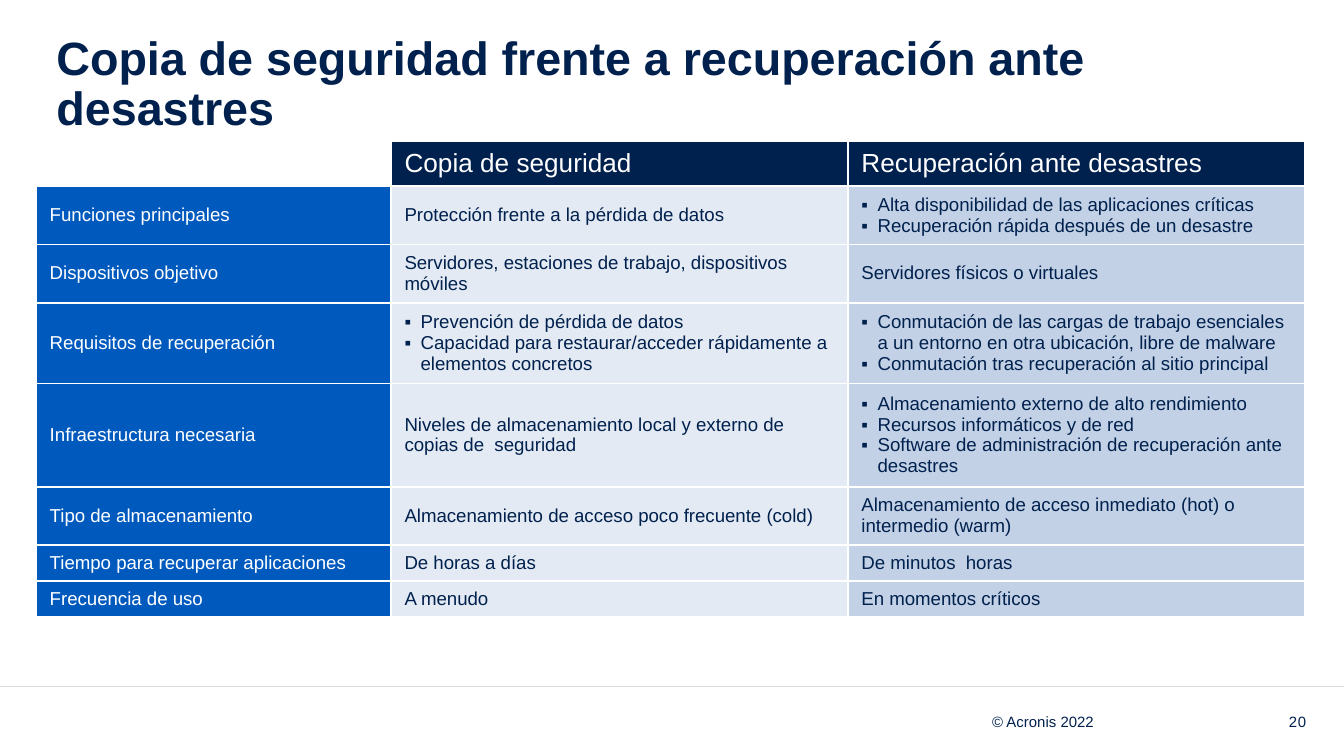
from pptx import Presentation
from pptx.dml.color import RGBColor
from pptx.enum.shapes import MSO_CONNECTOR
from pptx.enum.text import MSO_ANCHOR, MSO_AUTO_SIZE, PP_ALIGN
from pptx.oxml.ns import qn
from pptx.util import Inches, Pt
from lxml.etree import SubElement

COLORS = {
    "navy": "00204D",
    "blue": "005ABE",
    "pale": "E3EAF3",
    "mist": "C2D1E5",
    "white": "FFFFFF",
    "rule": "D9D9D9",
}


def add_run(paragraph, text, size, color, bold=False):
    run = paragraph.add_run()
    run.text = text
    run.font.name = "Arial"
    run.font.size = Pt(size)
    run.font.bold = bold
    run.font.color.rgb = RGBColor.from_string(COLORS[color])
    return run


def set_borders(cell):
    properties = cell._tc.get_or_add_tcPr()
    for position, tag in enumerate(["a:lnL", "a:lnR", "a:lnT", "a:lnB"]):
        border = SubElement(properties, qn(tag), w=str(Pt(1)))
        fill = SubElement(border, qn("a:solidFill"))
        SubElement(fill, qn("a:srgbClr"), val=COLORS["white"])
        properties.insert(position, border)


prs = Presentation()
prs.slide_width = Inches(10)
prs.slide_height = Inches(10 * 9 / 16)
slide = prs.slides.add_slide(prs.slide_layouts[5])

footer_rule = slide.shapes.add_connector(
    MSO_CONNECTOR.STRAIGHT, Inches(0), Inches(5.11), Inches(10), Inches(5.11)
)
footer_rule.line.color.rgb = RGBColor.from_string(COLORS["rule"])
footer_rule.line.width = Pt(0.5)
SubElement(footer_rule._element.spPr, qn("a:effectLst"))

footers = [("© Acronis 2022", 6.52, 1.62, 0), ("20", 9.15, 0.57, 50)]
for text, left, width, spacing in footers:
    footer = slide.shapes.add_textbox(Inches(left), Inches(5.11), Inches(width), Inches(0.52))
    frame = footer.text_frame
    frame.word_wrap = True
    frame.vertical_anchor = MSO_ANCHOR.MIDDLE
    frame.margin_left = frame.margin_right = frame.margin_top = frame.margin_bottom = 0
    frame.paragraphs[0].alignment = PP_ALIGN.RIGHT
    run = add_run(frame.paragraphs[0], text, 8, "navy")
    if spacing:
        run._r.get_or_add_rPr().set("spc", str(spacing))

title = slide.shapes.title
title.left, title.top = Inches(0.42), Inches(0.26)
title.width, title.height = Inches(9.15), Inches(0.78)
heading = title.text_frame
heading.word_wrap = True
heading.auto_size = MSO_AUTO_SIZE.NONE
heading.vertical_anchor = MSO_ANCHOR.TOP
heading.margin_left = heading.margin_right = heading.margin_top = heading.margin_bottom = 0
heading.paragraphs[0].alignment = PP_ALIGN.LEFT
heading.paragraphs[0].line_spacing = 0.9
add_run(heading.paragraphs[0], "Copia de seguridad frente a recuperación ante desastres", 25, "navy", True)

comparison = [
    ("", "Copia de seguridad", "Recuperación ante desastres"),
    ("Funciones principales", "Protección frente a la pérdida de datos",
     ["Alta disponibilidad de las aplicaciones críticas",
      "Recuperación rápida después de un desastre"]),
    ("Dispositivos objetivo", "Servidores, estaciones de trabajo, dispositivos móviles",
     "Servidores físicos o virtuales"),
    ("Requisitos de recuperación",
     ["Prevención de pérdida de datos",
      "Capacidad para restaurar/acceder rápidamente a elementos concretos"],
     ["Conmutación de las cargas de trabajo esenciales a un entorno en otra ubicación, libre de malware",
      "Conmutación tras recuperación al sitio principal"]),
    ("Infraestructura necesaria",
     "Niveles de almacenamiento local y externo de copias de  seguridad",
     ["Almacenamiento externo de alto rendimiento",
      "Recursos informáticos y de red",
      "Software de administración de recuperación ante desastres"]),
    ("Tipo de almacenamiento", "Almacenamiento de acceso poco frecuente (cold)",
     "Almacenamiento de acceso inmediato (hot) o intermedio (warm)"),
    ("Tiempo para recuperar aplicaciones", "De horas a días", "De minutos  horas"),
    ("Frecuencia de uso", "A menudo", "En momentos críticos"),
]
header_fills = ["white", "navy", "navy"]
body_fills = ["blue", "pale", "mist"]
body_inks = ["white", "navy", "navy"]

comparison_frame = slide.shapes.add_table(
    len(comparison), 3, Inches(0.27), Inches(1.05), Inches(9.44), Inches(3.53)
)
table = comparison_frame.table
for column, width in zip(table.columns, [2.64, 3.4, 3.4]):
    column.width = Inches(width)

for row_index, contents in enumerate(comparison):
    table.rows[row_index].height = Inches(0)
    is_header = row_index == 0
    size = 14 if is_header else 10
    for column_index, content in enumerate(contents):
        cell = table.cell(row_index, column_index)
        fill = (header_fills if is_header else body_fills)[column_index]
        ink = "white" if is_header else body_inks[column_index]
        cell.fill.solid()
        cell.fill.fore_color.rgb = RGBColor.from_string(COLORS[fill])
        cell.vertical_anchor = MSO_ANCHOR.MIDDLE
        set_borders(cell)
        frame = cell.text_frame
        if not content:
            SubElement(frame.paragraphs[0]._p, qn("a:endParaRPr"), sz=str(size * 100))
            continue
        bulleted = isinstance(content, list)
        for item_index, item in enumerate(content if bulleted else [content]):
            paragraph = frame.add_paragraph() if item_index else frame.paragraphs[0]
            if bulleted:
                indent = paragraph._p.get_or_add_pPr()
                indent.set("marL", str(Inches(0.12)))
                indent.set("indent", str(Inches(-0.12)))
                SubElement(indent, qn("a:buFont"), typeface="Arial")
                SubElement(indent, qn("a:buChar"), char="▪")
            add_run(paragraph, item, size, ink)

comparison_frame.height = Inches(3.53)

prs.save("out.pptx")
